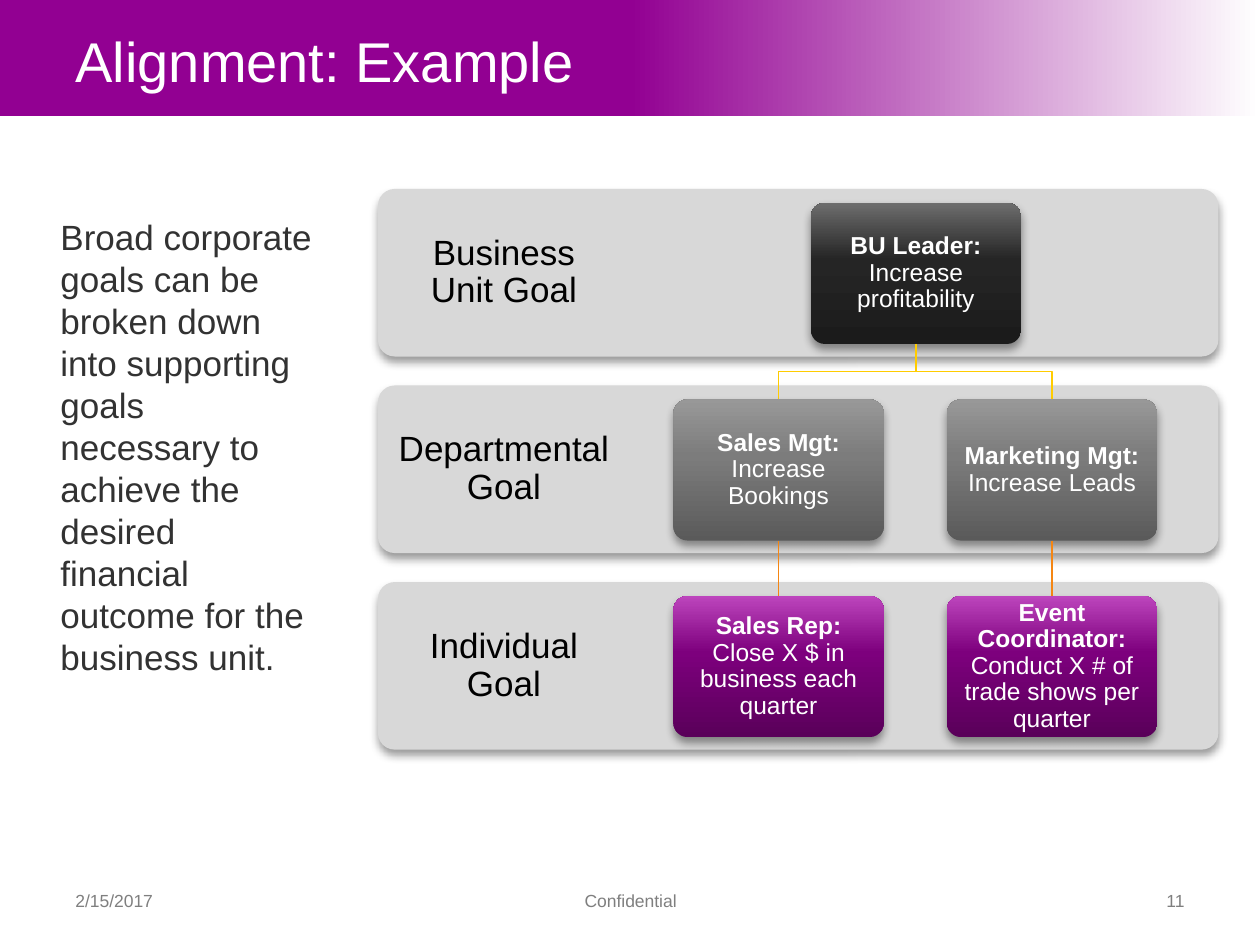
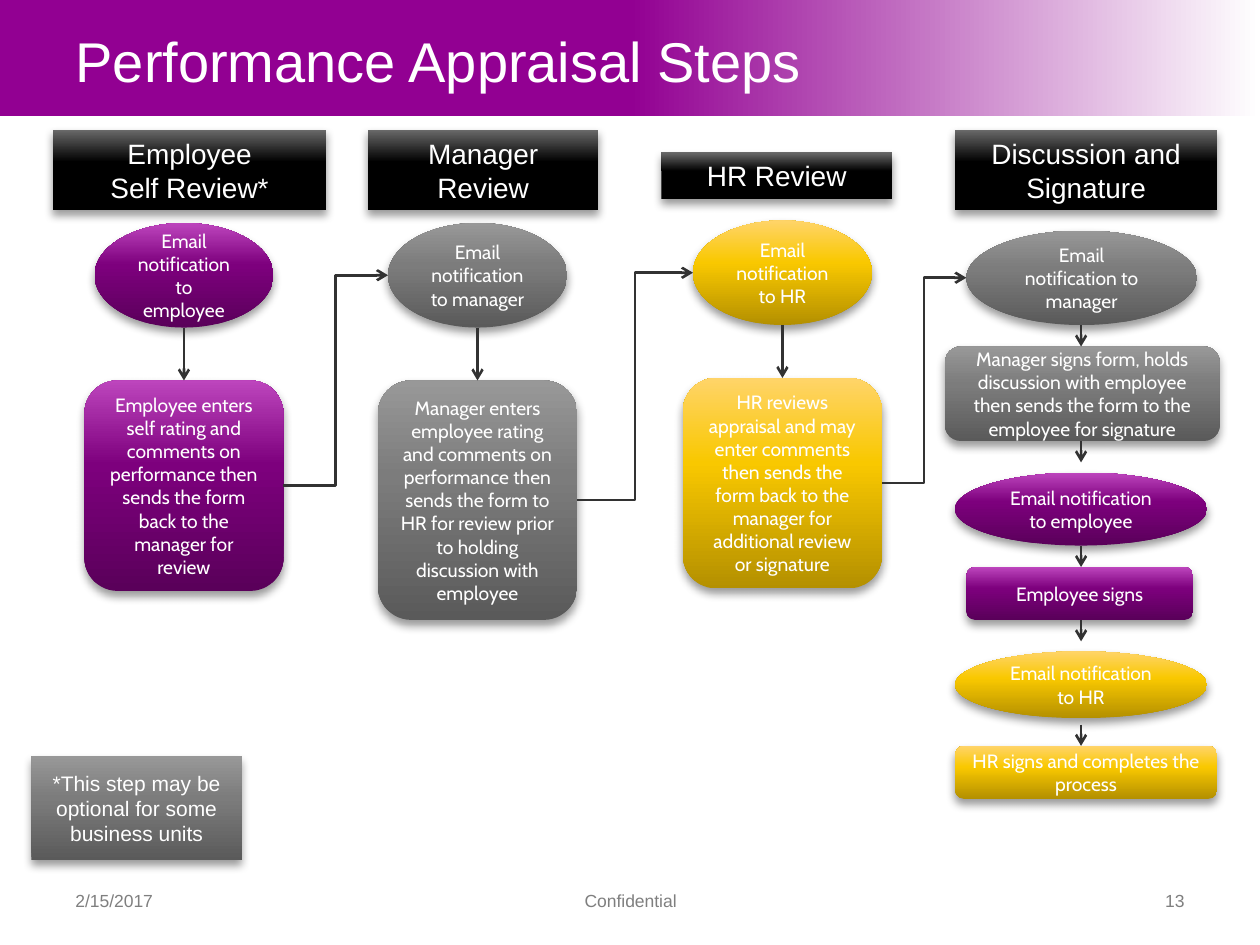
from lxml import etree
from pptx import Presentation
from pptx.dml.color import RGBColor
from pptx.enum import shapes, text
from pptx.oxml import ns
from pptx.util import Inches, Pt

PURPLE = [(0, "5A005A"), (60, "7D007D"), (100, "BD45BD")]
GRAY = [(0, "5A5A5A"), (60, "7C7C7C"), (100, "989898")]
GOLD = [(0, "B49000"), (60, "F9C800"), (100, "FFD469")]
CHARCOAL = [(0, "1B1B1B"), (60, "252525"), (100, "6D6D6D")]
BLACK = [(0, "000000"), (60, "000000"), (100, "696969")]
BAND = [(1, "920092"), (50, "920092"), (100, "FFFFFF")]
WHITE, INK, FOOTER_GRAY, LEVEL_GRAY = "FFFFFF", "323232", "7F7F7F", "D8D8D8"
BRANCH, STEM = "FFCC00", "F58613"

SHAPE = shapes.MSO_SHAPE
RECT, ROUND, OVAL = SHAPE.RECTANGLE, SHAPE.ROUNDED_RECTANGLE, SHAPE.OVAL
LEFT, CENTER, RIGHT = text.PP_ALIGN.LEFT, text.PP_ALIGN.CENTER, text.PP_ALIGN.RIGHT
TOP, MIDDLE = text.MSO_ANCHOR.TOP, text.MSO_ANCHOR.MIDDLE

ALIGNMENT_TITLE = "Alignment: Example"
ALIGNMENT_INTRO = (
    "Broad corporate goals can be broken down into supporting goals "
    "necessary to achieve the desired financial outcome for the business unit."
)
LEADER_X, SALES_X, MARKETING_X = 7.27, 6.18, 8.35
LEVELS = [
    ("Business Unit Goal", CHARCOAL, [
        (LEADER_X, "BU Leader:", " Increase profitability"),
    ]),
    ("Departmental Goal", GRAY, [
        (SALES_X, "Sales Mgt:", " Increase Bookings"),
        (MARKETING_X, "Marketing Mgt:", " Increase Leads"),
    ]),
    ("Individual Goal", PURPLE, [
        (SALES_X, "Sales Rep:", " Close X $ in business each quarter"),
        (MARKETING_X, "Event Coordinator:", " Conduct X # of trade shows per quarter"),
    ]),
]
LEVEL_TOP, LEVEL_PITCH, LEVEL_HEIGHT = 1.5, 1.56, 1.33
GOAL_TOP, GOAL_WIDTH, GOAL_HEIGHT = 1.61, 1.67, 1.12

APPRAISAL_TITLE = "Performance Appraisal Steps"
STAGES = [
    {
        "heading": ("Employee\nSelf Review*", (0.42, 1.03, 2.17, 0.64)),
        "steps": [
            (OVAL, PURPLE, "Email notification to employee", (0.75, 1.77, 1.42, 0.83)),
            (ROUND, PURPLE,
             "Employee enters self rating and comments on performance then sends "
             "the form back to the manager for review", (0.67, 3.02, 1.58, 1.67)),
        ],
        "axis": 1.46, "arrow_tops": [2.6], "arrow_length": 0.42,
    },
    {
        "heading": ("Manager Review", (2.92, 1.03, 1.83, 0.64)),
        "steps": [
            (OVAL, GRAY, "Email notification to manager", (3.08, 1.77, 1.42, 0.83)),
            (ROUND, GRAY,
             "Manager enters employee rating and comments on performance then sends "
             "the form to HR for review prior to holding discussion with employee",
             (3, 3.02, 1.58, 1.9)),
        ],
        "axis": 3.79, "arrow_tops": [2.6], "arrow_length": 0.42,
    },
    {
        "heading": ("HR Review", (5.25, 1.21, 1.83, 0.37)),
        "steps": [
            (OVAL, GOLD, "Email notification to HR", (5.5, 1.75, 1.42, 0.83)),
            (ROUND, GOLD,
             "HR reviews appraisal and may enter comments then sends the form back "
             "to the manager for additional review or signature", (5.42, 3, 1.58, 1.67)),
        ],
        "axis": 6.21, "arrow_tops": [2.58], "arrow_length": 0.42,
    },
    {
        "heading": ("Discussion and Signature", (7.58, 1.03, 2.08, 0.64)),
        "steps": [
            (OVAL, GRAY, "Email notification to manager", (7.67, 1.83, 1.83, 0.75)),
            (ROUND, GRAY,
             "Manager signs form, holds discussion with employee then sends the form "
             "to the employee for signature", (7.5, 2.75, 2.18, 0.75)),
            (OVAL, PURPLE, "Email notification to employee", (7.58, 3.75, 2, 0.58)),
            (ROUND, PURPLE, "Employee signs", (7.67, 4.5, 1.8, 0.42)),
            (OVAL, GOLD, "Email notification to HR", (7.58, 5.17, 2, 0.53)),
            (ROUND, GOLD, "HR signs and completes the process", (7.58, 5.92, 2.08, 0.42)),
        ],
        "axis": 8.58, "arrow_tops": [2.58, 3.5, 4.33, 4.92, 5.75], "arrow_length": 0.17,
    },
]
FOOTNOTE = ("*This step may be optional for some business units", (0.25, 6, 1.67, 0.83))


def rgb(color):
    return RGBColor.from_string(color)


def child(parent, tag, **attributes):
    return etree.SubElement(parent, ns.qn(tag), {k: str(v) for k, v in attributes.items()})


def inches(box):
    return [Inches(value) for value in box]


def place(shape, box):
    shape.left, shape.top, shape.width, shape.height = inches(box)


def write(shape, content, lead="", size=11, font="Arial", color=WHITE, align=CENTER,
          anchor=MIDDLE, inset=(0.1, 0.05), spacing=None, indent=None):
    frame = shape.text_frame
    frame.word_wrap = True
    frame.auto_size = text.MSO_AUTO_SIZE.NONE
    frame.vertical_anchor = anchor
    frame.margin_left = frame.margin_right = Inches(inset[0])
    frame.margin_top = frame.margin_bottom = Inches(inset[1])
    for number, line in enumerate(content.split("\n")):
        paragraph = frame.add_paragraph() if number else frame.paragraphs[0]
        if indent is not None:
            properties = paragraph._p.get_or_add_pPr()
            properties.set("marL", str(Inches(indent)))
            properties.set("indent", "0")
            child(properties, "a:buNone")
        paragraph.alignment = align
        paragraph.space_before = Pt(0)
        if spacing:
            paragraph.line_spacing = spacing
        for words, bold in ((lead, True), (line, False)):
            if words:
                run = paragraph.add_run()
                run.text = words
                run.font.size, run.font.name, run.font.bold = Pt(size), font, bold
                run.font.color.rgb = rgb(color)


def shade(shape, stops, angle=270):
    shape.fill.gradient()
    gradient = shape._element.spPr.find(ns.qn("a:gradFill"))
    for part in list(gradient):
        gradient.remove(part)
    stop_list = child(gradient, "a:gsLst")
    for position, color in stops:
        stop = child(stop_list, "a:gs", pos=position * 1000)
        child(stop, "a:srgbClr", val=color)
    child(gradient, "a:lin", ang=angle * 60000, scaled=0)


def cast_shadow(shape):
    effects = shape._element.spPr.find(ns.qn("a:effectLst"))
    shadow = child(effects, "a:outerShdw", blurRad=Pt(5.2), dist=Pt(3),
                   dir=90 * 60000, rotWithShape=0)
    child(child(shadow, "a:srgbClr", val="000000"), "a:alpha", val=40000)


def add_block(slide, kind, box, fill, corner=None, angle=270, raised=True):
    block = slide.shapes.add_shape(kind, *inches(box))
    block.shadow.inherit = False
    block.line.fill.background()
    if isinstance(fill, str):
        block.fill.solid()
        block.fill.fore_color.rgb = rgb(fill)
    else:
        shade(block, fill, angle)
    if corner is not None:
        block.adjustments[0] = corner
    if raised:
        cast_shadow(block)
    return block


def add_label(slide, content, box, **style):
    write(slide.shapes.add_textbox(*inches(box)), content, **style)


def add_arrow(slide, start, end, kind=shapes.MSO_CONNECTOR.STRAIGHT):
    arrow = slide.shapes.add_connector(kind, *inches(start + end))
    arrow.line.color.rgb = rgb(INK)
    arrow.line.width = Pt(1.5)
    child(arrow.line._get_or_add_ln(), "a:tailEnd", type="arrow")
    child(arrow._element.spPr, "a:effectLst")


def add_path(slide, points, color):
    start, *rest = [inches(point) for point in points]
    builder = slide.shapes.build_freeform(*start)
    builder.add_line_segments(rest, close=False)
    path = builder.convert_to_shape()
    path.shadow.inherit = False
    path.fill.background()
    path.line.color.rgb = rgb(color)
    path.line.width = Pt(0.75)


def add_slide(deck, layout, title, number):
    slide = deck.slides.add_slide(deck.slide_layouts[layout])
    place(slide.shapes.title, (0.5, 0, 9, 0.95))
    write(slide.shapes.title, title, size=32, align=LEFT)
    for content, left, width, align in (("2/15/2017", 0.5, 2.33, LEFT),
                                        (number, 7.17, 2.33, RIGHT),
                                        ("Confidential", 3.42, 3.17, CENTER)):
        add_label(slide, content, (left, 6.95, width, 0.4), size=10,
                  color=FOOTER_GRAY, align=align)
    return slide


def add_master_band(deck, slide):
    band = add_block(slide, RECT, (0, 0, 10, 0.92), BAND, angle=0, raised=False)
    deck.slide_master.shapes.element.insert(2, band.element)


def build_alignment(deck):
    slide = add_slide(deck, 1, ALIGNMENT_TITLE, "11")
    add_master_band(deck, slide)
    intro = slide.placeholders[1]
    place(intro, (0, 1.66, 2.58, 4.24))
    write(intro, ALIGNMENT_INTRO, size=20, color=INK, align=LEFT, anchor=TOP, indent=0.38)

    for row, (label, _, _) in enumerate(LEVELS):
        top = LEVEL_TOP + row * LEVEL_PITCH
        add_block(slide, ROUND, (3, top, 6.67, LEVEL_HEIGHT), LEVEL_GRAY, corner=0.1)
        add_label(slide, label, (3, top, 2, LEVEL_HEIGHT), size=20, color="000000",
                  inset=(0.16, 0.16), spacing=0.9)

    for row, (_, fill, goals) in enumerate(LEVELS):
        top = GOAL_TOP + row * LEVEL_PITCH
        above = top - LEVEL_PITCH + GOAL_HEIGHT
        for x, owner, goal in goals:
            if row == 1:
                bend = (above + top) / 2
                add_path(slide, [(LEADER_X, above), (LEADER_X, bend), (x, bend), (x, top)],
                         BRANCH)
            elif row == 2:
                add_path(slide, [(x, above), (x, top)], STEM)
            box = (x - GOAL_WIDTH / 2, top, GOAL_WIDTH, GOAL_HEIGHT)
            block = add_block(slide, ROUND, box, fill, corner=0.1)
            write(block, goal, lead=owner, size=14, inset=(0.06, 0.06), spacing=0.9)


def build_appraisal(deck):
    slide = add_slide(deck, 5, APPRAISAL_TITLE, "13")
    for stage in STAGES:
        heading, box = stage["heading"]
        write(add_block(slide, RECT, box, BLACK), heading, size=16)
        for kind, fill, step, box in stage["steps"]:
            write(add_block(slide, kind, box, fill), step, font="Cabin")
        for top in stage["arrow_tops"]:
            add_arrow(slide, (stage["axis"], top),
                      (stage["axis"], top + stage["arrow_length"]))

    for stage, following in zip(STAGES, STAGES[1:]):
        left, top, width, height = stage["steps"][-1][-1]
        next_left, next_top, _, next_height = following["steps"][0][-1]
        add_arrow(slide, (left + width, top + height / 2),
                  (next_left, next_top + next_height / 2), shapes.MSO_CONNECTOR.ELBOW)

    note, box = FOOTNOTE
    write(add_block(slide, RECT, box, GRAY), note, size=12)


def main():
    deck = Presentation()
    deck.slide_width, deck.slide_height = Inches(10), Inches(7.5)
    build_alignment(deck)
    build_appraisal(deck)
    deck.save("out.pptx")


if __name__ == "__main__":
    main()
